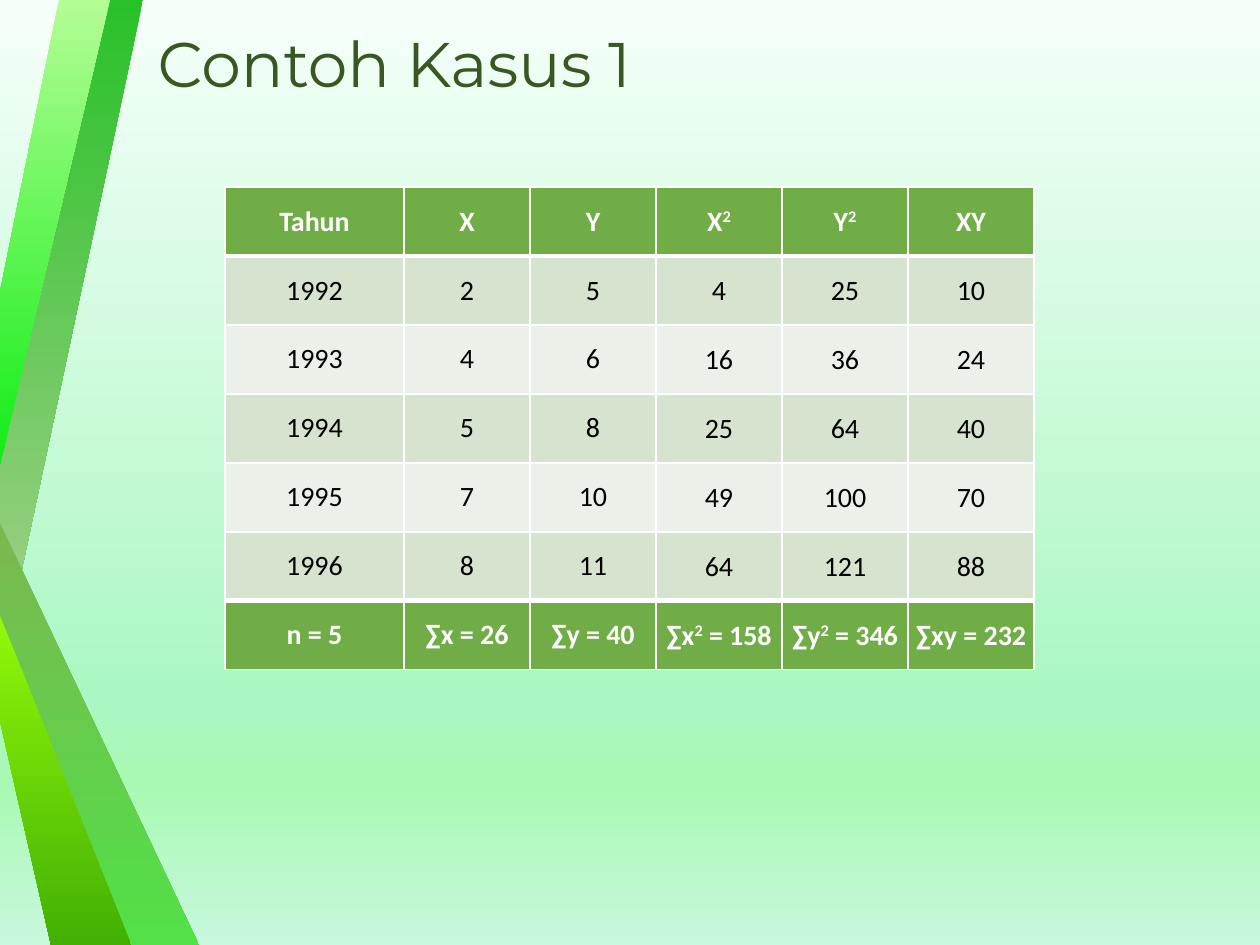
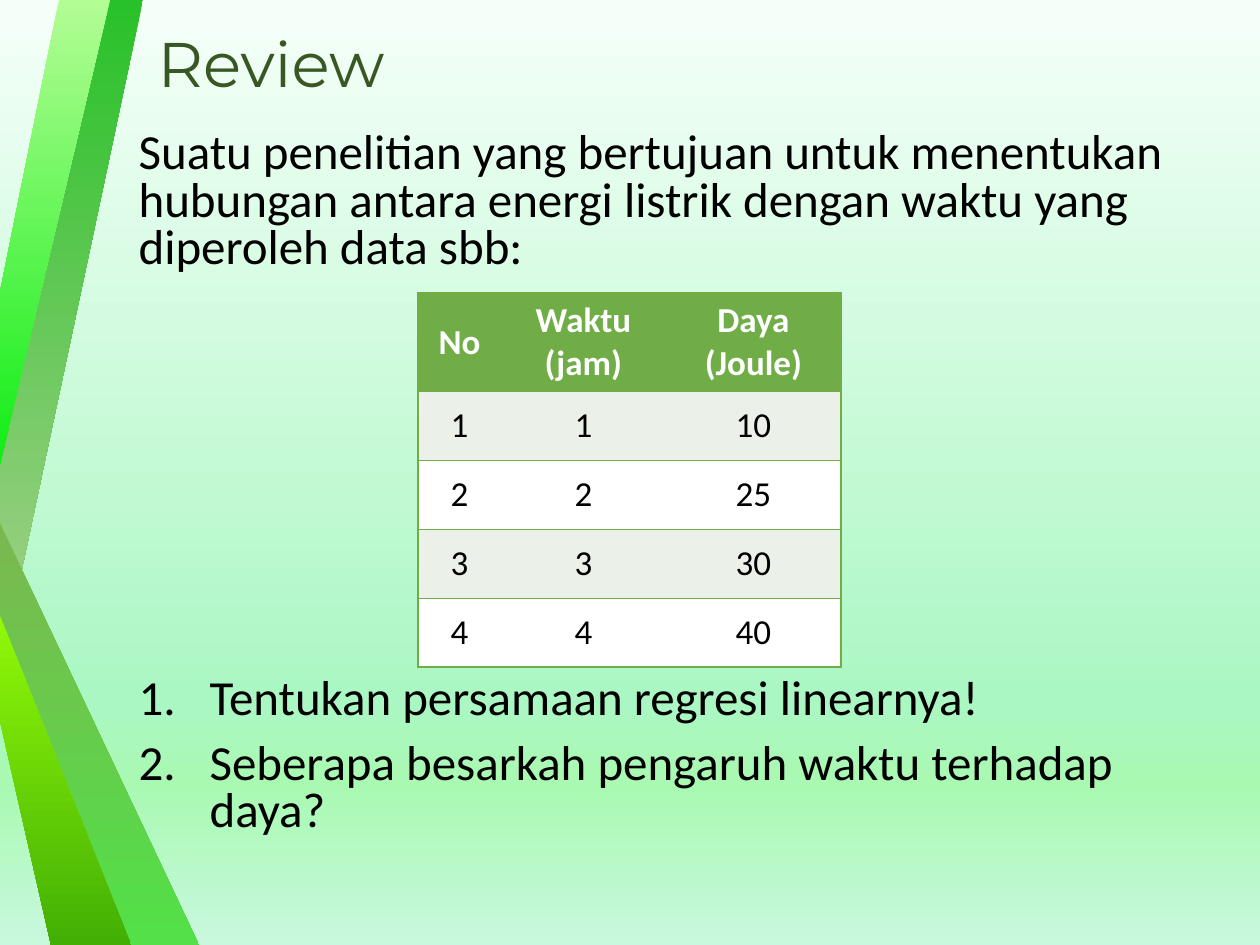
from copy import deepcopy

from lxml.etree import SubElement
from pptx import Presentation
from pptx.dml.color import RGBColor
from pptx.enum.text import MSO_ANCHOR, MSO_AUTO_SIZE, PP_ALIGN
from pptx.oxml.ns import qn
from pptx.util import Pt

PX = 914400 / 126
GREEN, WHITE, BLACK, TITLE_GREEN = "70AD47", "FFFFFF", "000000", "385723"
SAGE, PALE_SAGE = "D5E3CF", "EBF1E9"
NO_TABLE_STYLE = "{2D5ABB26-0587-4C30-8999-92F81FD0307C}"

BACKGROUND = [(0, "F5FFF9"), (74, "ABF7C3"), (83, "A9F9B3"), (100, "C8F8DE")]
RIBBONS = [
    ("29C129", "A9D18E", [(0, 461), (0, 672), (143, 0), (110, 0)]),
    ("B3FD95", "11ED16", [(0, 292), (0, 464), (110, 0), (59, 0)]),
    ("7AB850", "53E048", [(0, 523), (199, 945), (130, 945), (0, 631)]),
    ("91F907", "42AF05", [(0, 721), (0, 616), (131, 945), (51, 945)]),
]

CASE_ROWS = [
    ["Tahun", "X", "Y", "X^2", "Y^2", "XY"],
    ["1992", "2", "5", "4", "25", "10"],
    ["1993", "4", "6", "16", "36", "24"],
    ["1994", "5", "8", "25", "64", "40"],
    ["1995", "7", "10", "49", "100", "70"],
    ["1996", "8", "11", "64", "121", "88"],
    ["n = 5", "∑x = 26", "∑y = 40", "∑x^2 = 158", "∑y^2 = 346", "∑xy = 232"],
]
REVIEW_ROWS = [
    ["No", "Waktu (jam)", "Daya (Joule)"],
    ["1", "1", "10"],
    ["2", "2", "25"],
    ["3", "3", "30"],
    ["4", "4", "40"],
]
QUESTION = ("Suatu penelitian yang bertujuan untuk menentukan hubungan antara "
            "energi listrik dengan waktu yang diperoleh data sbb:")
TASKS = ["Tentukan persamaan regresi linearnya!",
         "Seberapa besarkah pengaruh waktu terhadap daya?"]


def px(length):
    return round(length * PX)


def color(hex_string):
    return RGBColor.from_string(hex_string)


def apply(target, values):
    for name, value in values.items():
        setattr(target, name, value)


def place(shape, box):
    apply(shape, dict(zip(("left", "top", "width", "height"), map(px, box))))


def set_font(font, size, hex_string, name="Calibri", bold=False):
    apply(font, {"name": name, "size": Pt(size), "bold": bold})
    font.color.rgb = color(hex_string)


def set_gradient(fill, owner, stops):
    """Fill from top to bottom with (percent, colour) stops."""
    fill.gradient()
    gradient = next(owner.iter(qn("a:gradFill")))
    stop_list = gradient.find(qn("a:gsLst"))
    while len(stop_list) < len(stops):
        stop_list.append(deepcopy(stop_list[-1]))
    for stop, (percent, hex_string) in zip(fill.gradient_stops, stops):
        stop.position = percent / 100
        stop.color.rgb = color(hex_string)
    gradient.find(qn("a:lin")).set("ang", str(90 * 60000))


def decorate_master(master, slide):
    """Background and ribbons; the slide lends its freeform builder."""
    set_gradient(master.background.fill, master.element, BACKGROUND)
    tree = master.element.cSld.spTree
    for index, (top_color, bottom_color, points) in enumerate(RIBBONS):
        builder = slide.shapes.build_freeform(*points[0], scale=PX)
        builder.add_line_segments(points[1:], close=True)
        ribbon = builder.convert_to_shape()
        ribbon.shadow.inherit = False
        ribbon.line.fill.background()
        set_gradient(ribbon.fill, ribbon.element, [(0, top_color), (100, bottom_color)])
        ribbon.element.nvSpPr.cNvPr.set("id", str(20 + index))
        tree.insert(2 + index, ribbon.element)


def set_title(slide, text):
    title = slide.shapes.title
    place(title, (145, 26, 1086, 82))
    title.text = text
    apply(title.text_frame, {"vertical_anchor": MSO_ANCHOR.MIDDLE,
                             "auto_size": MSO_AUTO_SIZE.NONE})
    paragraph = title.text_frame.paragraphs[0]
    apply(paragraph, {"alignment": PP_ALIGN.LEFT, "line_spacing": 0.9})
    set_font(paragraph.font, 36, TITLE_GREEN, "Montserrat")


def set_body(body, box):
    """Question above the table, numbered tasks below it."""
    place(body, box)
    frame = body.text_frame
    frame.auto_size = MSO_AUTO_SIZE.NONE
    # The first task skips the height of the table
    for index, (text, before) in enumerate(zip([QUESTION, *TASKS], (0, 231, 10))):
        paragraph = frame.add_paragraph() if index else frame.paragraphs[0]
        paragraph.text = text
        properties = paragraph._p.get_or_add_pPr()
        indent = px(71) if index else 0
        properties.set("marL", str(indent))
        properties.set("indent", str(-indent))
        if index:
            SubElement(properties, qn("a:buFont"), typeface="+mj-lt")
            SubElement(properties, qn("a:buAutoNum"), type="arabicPeriod")
        else:
            SubElement(properties, qn("a:buNone"))
        apply(paragraph, {"line_spacing": 0.8, "space_before": Pt(before),
                          "space_after": Pt(0), "alignment": PP_ALIGN.LEFT})
        set_font(paragraph.font, 28, BLACK)


def set_borders(cell, hex_string, widths):
    """Draw the sides L, R, T, B that have a width in points."""
    properties = cell._tc.get_or_add_tcPr()
    for side in "LRTB":
        width = widths.get(side, 0)
        line = SubElement(properties, qn(f"a:ln{side}"), w=str(Pt(width)))
        if width:
            solid = SubElement(line, qn("a:solidFill"))
            SubElement(solid, qn("a:srgbClr"), val=hex_string)
        else:
            SubElement(line, qn("a:noFill"))


def write_cell(cell, text, size, strong):
    """A caret in the text raises the one character after it."""
    paragraph = cell.text_frame.paragraphs[0]
    paragraph.alignment = PP_ALIGN.CENTER
    base, _, rest = text.partition("^")
    for part, raised in ((base, False), (rest[:1], True), (rest[1:], False)):
        if part:
            run = paragraph.add_run()
            run.text = part
            set_font(run.font, size, WHITE if strong else BLACK, bold=strong)
            if raised:
                run._r.get_or_add_rPr().set("baseline", "30000")
    cell.vertical_anchor = MSO_ANCHOR.MIDDLE


def add_data_table(slide, origin, rows, widths, heights, size, strong_rows,
                   bands, border_color, border_rule):
    box = (*origin, sum(widths), sum(heights))
    frame = slide.shapes.add_table(len(rows), len(widths), *map(px, box))
    table = frame.table
    table._tbl.tblPr.find(qn("a:tableStyleId")).text = NO_TABLE_STYLE
    for column, width in zip(table.columns, widths):
        column.width = px(width)
    for row, height in zip(table.rows, heights):
        row.height = px(height)
    for row_index, texts in enumerate(rows):
        strong = row_index in strong_rows
        for column_index, text in enumerate(texts):
            cell = table.cell(row_index, column_index)
            write_cell(cell, text, size, strong)
            set_borders(cell, border_color, border_rule(row_index, column_index))
            cell.fill.solid()
            cell.fill.fore_color.rgb = color(GREEN if strong else bands[(row_index - 1) % 2])
    return table


def case_borders(row, column):
    last = len(CASE_ROWS) - 1
    return {"L": 1, "R": 1,
            "T": 3 if row in (1, last) else 1,
            "B": 3 if row in (0, last - 1) else 1}


def review_borders(row, column):
    return {"L": int(column == 0), "R": int(column == 2), "T": 1, "B": 1}


def fill_case_slide(slide):
    set_title(slide, "Contoh Kasus 1")
    table = add_data_table(slide, (225, 187), CASE_ROWS, [179] + [126] * 5, [69] * 7,
                           16, (0, 6), (SAGE, PALE_SAGE), WHITE, case_borders)
    # Computed columns have tight margins
    for row in range(1, len(CASE_ROWS)):
        for column in range(3, 6):
            apply(table.cell(row, column), {"margin_left": px(1), "margin_right": px(1),
                                            "margin_top": px(1), "margin_bottom": 0})


def fill_review_slide(slide):
    set_title(slide, "Review")
    set_body(slide.placeholders[1], (126, 126, 1106, 762))
    add_data_table(slide, (418, 293), REVIEW_ROWS, [83, 165, 175], [98] + [69] * 4,
                   20, (0,), (PALE_SAGE, WHITE), GREEN, review_borders)


def main():
    presentation = Presentation()
    apply(presentation, {"slide_width": px(1260), "slide_height": px(945)})
    layouts = presentation.slide_layouts
    case_slide = presentation.slides.add_slide(layouts.get_by_name("Title Only"))
    review_slide = presentation.slides.add_slide(layouts.get_by_name("Title and Content"))
    decorate_master(presentation.slide_master, case_slide)
    fill_case_slide(case_slide)
    fill_review_slide(review_slide)
    presentation.save("out.pptx")


if __name__ == "__main__":
    main()
